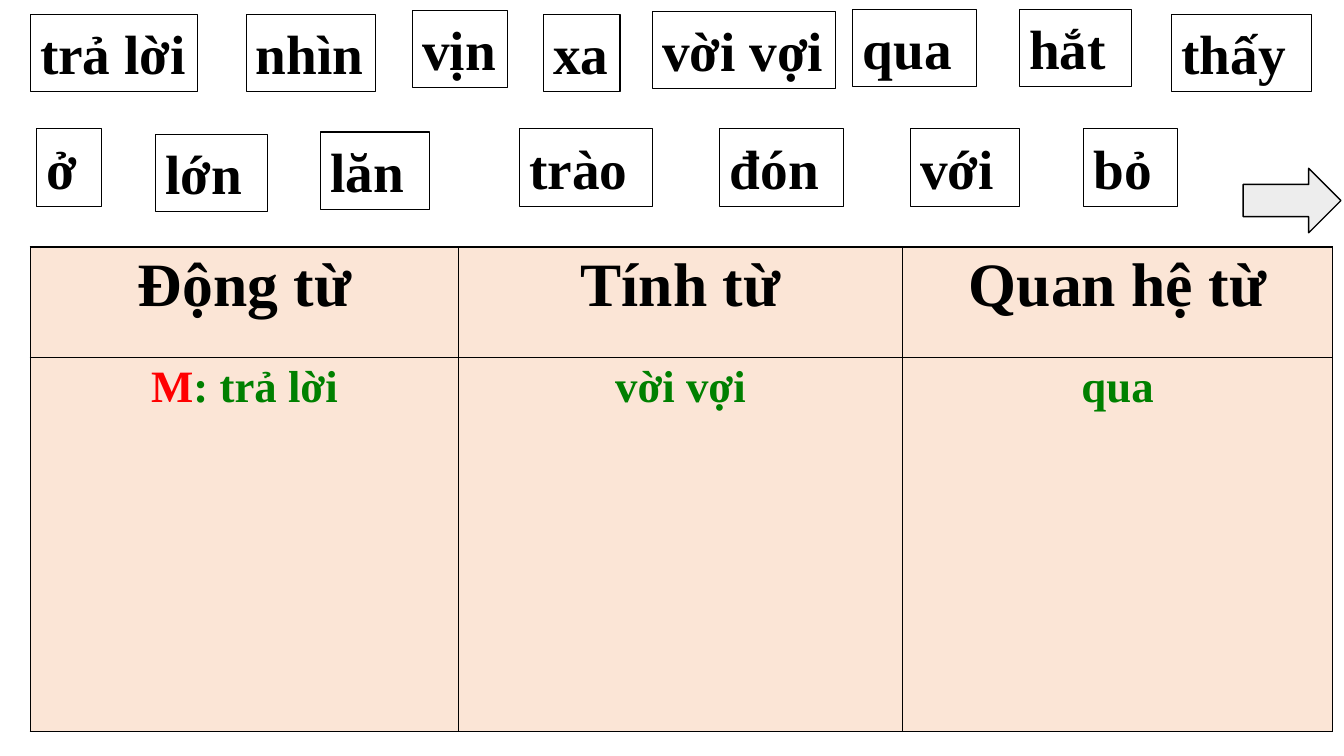
from lxml.etree import SubElement
from pptx import Presentation
from pptx.dml.color import RGBColor
from pptx.enum.shapes import MSO_SHAPE
from pptx.enum.text import MSO_ANCHOR, PP_ALIGN
from pptx.oxml.ns import qn
from pptx.util import Pt

PX = 9144  # 100 px to the inch
BLACK = RGBColor(0x00, 0x00, 0x00)
RED = RGBColor(0xFF, 0x00, 0x00)
GREEN = RGBColor(0x00, 0x80, 0x00)
PEACH = RGBColor(0xFB, 0xE5, 0xD6)
GREY = RGBColor(0xED, 0xED, 0xED)


def add_text(para, text, size, color=BLACK, align=PP_ALIGN.LEFT):
    para.alignment = align
    span = para.add_run()
    span.text = text
    span.font.name = "Times New Roman"
    span.font.size = Pt(size)
    span.font.bold = True
    span.font.color.rgb = color


def add_cell_borders(cell):
    """Draw a thin black line on all four sides, ahead of the cell's fill."""
    properties = cell._tc.get_or_add_tcPr()
    for index, side in enumerate(("lnL", "lnR", "lnT", "lnB")):
        line = SubElement(properties, qn(f"a:{side}"), w=str(Pt(1)))
        fill = SubElement(line, qn("a:solidFill"))
        SubElement(fill, qn("a:srgbClr"), val=str(BLACK))
        properties.insert(index, line)


deck = Presentation()
deck.slide_width, deck.slide_height = 1333 * PX, 750 * PX
page = deck.slides.add_slide(deck.slide_layouts[6])

# Sorting table: one column for each word class
columns = [
    (425, "Động từ", [("M", RED), (": trả lời", GREEN)]),
    (440, "Tính từ", [("vời vợi", GREEN)]),
    (427, "Quan hệ từ", [("qua", GREEN)]),
]
table = page.shapes.add_table(2, 3, 30 * PX, 245 * PX, 1292 * PX, 481 * PX).table
table.rows[0].height, table.rows[1].height = 110 * PX, 371 * PX
for index, (width, heading, examples) in enumerate(columns):
    table.columns[index].width = width * PX
    for row, size, spans in ((0, 44, [(heading, BLACK)]), (1, 32, examples)):
        cell = table.cell(row, index)
        cell.fill.solid()
        cell.fill.fore_color.rgb = PEACH
        cell.margin_left = cell.margin_right = 13 * PX
        cell.margin_top = cell.margin_bottom = 5 * PX
        add_cell_borders(cell)
        for text, color in spans:
            add_text(cell.text_frame.paragraphs[0], text, size, color, PP_ALIGN.CENTER)

# Word cards: text, left, top, width
cards = [
    ("trả lời", 30, 14, 166), ("nhìn", 244, 14, 128), ("vịn", 409, 10, 94),
    ("xa", 539, 14, 76), ("vời vợi", 647, 11, 182), ("qua", 846, 9, 123),
    ("hắt", 1011, 9, 111), ("thấy", 1162, 14, 139),
    ("ở", 36, 128, 65), ("lớn", 154, 133, 111), ("lăn", 318, 131, 108),
    ("trào", 515, 128, 132), ("đón", 714, 128, 123), ("với", 903, 128, 108),
    ("bỏ", 1075, 128, 93),
]
for word, left, top, width in cards:
    card = page.shapes.add_shape(
        MSO_SHAPE.RECTANGLE, left * PX, top * PX, width * PX, 77 * PX)
    card.shadow.inherit = False
    card.fill.background()
    card.line.color.rgb = BLACK
    card.line.width = Pt(0.75)
    frame = card.text_frame
    frame.word_wrap = True
    frame.vertical_anchor = MSO_ANCHOR.TOP
    frame.margin_left, frame.margin_right = 10 * PX, 0
    frame.margin_top = frame.margin_bottom = 5 * PX
    add_text(frame.paragraphs[0], word, 39.5)

arrow = page.shapes.add_shape(
    MSO_SHAPE.RIGHT_ARROW, 1233 * PX, 167 * PX, 97 * PX, 64 * PX)
arrow.shadow.inherit = False
arrow.fill.solid()
arrow.fill.fore_color.rgb = GREY
arrow.line.color.rgb = BLACK
arrow.line.width = Pt(1)

deck.save("out.pptx")
